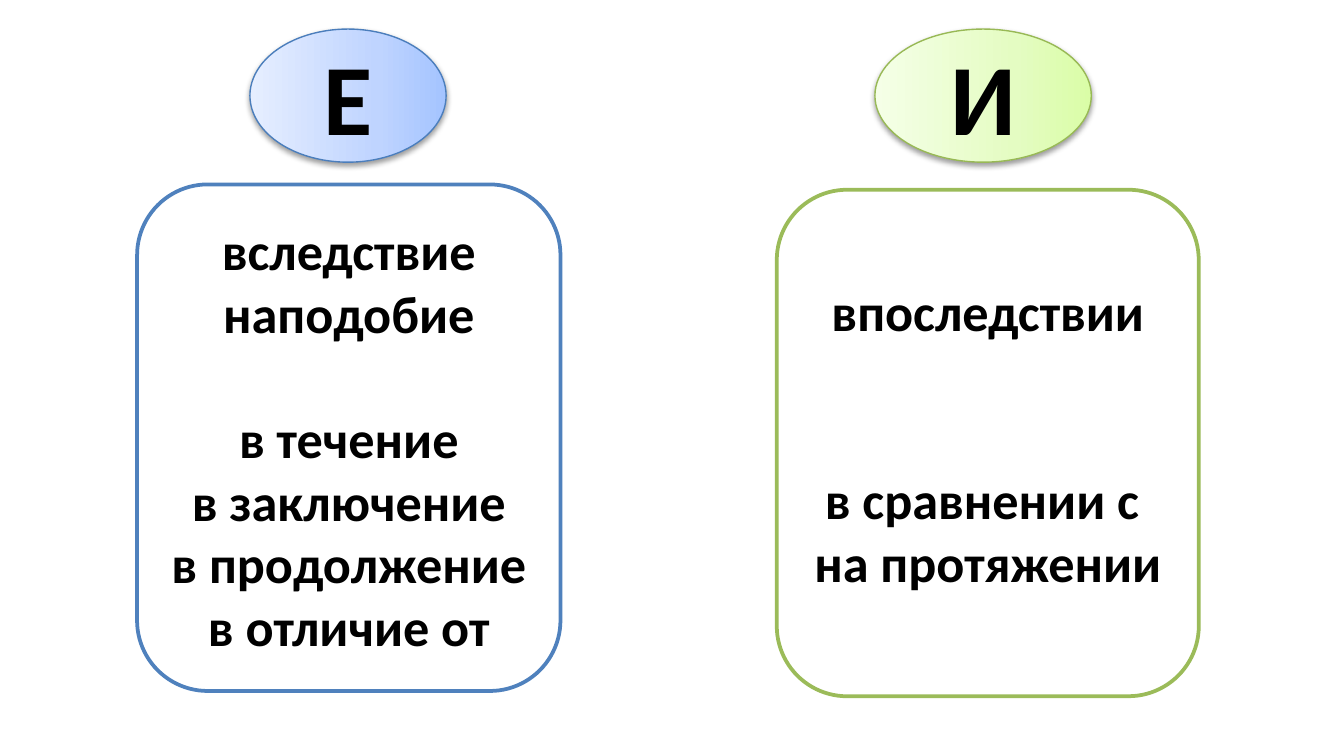
from copy import deepcopy
from dataclasses import dataclass

from lxml import etree
from pptx import Presentation
from pptx.dml.color import RGBColor
from pptx.enum.shapes import MSO_SHAPE
from pptx.enum.text import MSO_ANCHOR, PP_ALIGN
from pptx.util import Inches, Pt

OVAL, ROUNDED = MSO_SHAPE.OVAL, MSO_SHAPE.ROUNDED_RECTANGLE
TOP, MIDDLE, CENTER = MSO_ANCHOR.TOP, MSO_ANCHOR.MIDDLE, PP_ALIGN.CENTER
DRAWING = "http://schemas.openxmlformats.org/drawingml/2006/main"


@dataclass
class Theme:
    font: str = "Calibri"
    text: str = "000000"
    panel: str = "FFFFFF"
    letter_size: int = 54
    word_size: int = 28
    word_line: float = 33.5  # height of one line of words, in points
    blue: tuple = ("4B7EBC", "4F81BD", ("E6EEFF", "BFD4FF", "A4C4FF"))
    green: tuple = ("98B955", "9BBB59", ("F5FFE7", "E4FCC2", "DAFDA7"))


theme = Theme()
presentation = Presentation()
presentation.slide_width = Inches(10)
presentation.slide_height = presentation.slide_width * 9 // 16
slide = presentation.slides.add_slide(presentation.slide_layouts[6])

# Grid of 100 columns by 100 rows
COLUMN = presentation.slide_width / 100
ROW = presentation.slide_height / 100


def add_outlined(kind, box, line_color, line_width):
    left, top, width, height = box
    shape = slide.shapes.add_shape(kind, int(left * COLUMN), int(top * ROW),
                                   int(width * COLUMN), int(height * ROW))
    shape.shadow.inherit = False
    shape.line.color.rgb = RGBColor.from_string(line_color)
    shape.line.width = Pt(line_width)
    return shape


def write_lines(shape, lines, size, anchor):
    """Each line is its text and the space above it in points."""
    frame = shape.text_frame
    frame.word_wrap = True
    frame.vertical_anchor = anchor
    frame.text = "\n".join(text for text, _ in lines)
    for paragraph, (_, space) in zip(frame.paragraphs, lines):
        paragraph.alignment = CENTER
        paragraph.space_before = Pt(space)
        font = paragraph.runs[0].font
        font.name, font.size, font.bold = theme.font, Pt(size), True
        font.color.rgb = RGBColor.from_string(theme.text)


# Letter, colours, oval box, panel box, anchor, blank lines on top, words
groups = [
    ("Е", theme.blue, (18.6, 3.85, 14.6, 17.6), (10.2, 24.4, 31.5, 67), MIDDLE, 0,
     [("вследствие", 0), ("наподобие", 0), ("в течение", theme.word_line),
      ("в заключение", 0), ("в продолжение", 0), ("в отличие от", 0)]),
    ("И", theme.green, (65.1, 3.85, 16.1, 17.6), (57.8, 25.1, 31.4, 67), TOP, 1,
     [("впоследствии", 0), ("в сравнении с ", 2 * theme.word_line),
      ("на протяжении ", 0)]),
]

for letter, colors, oval_box, panel_box, anchor, blank_lines, words in groups:
    oval_line, panel_line, gradient = colors

    # Oval with the ending: three-stop gradient and soft shadow
    oval = add_outlined(OVAL, oval_box, oval_line, 0.75)
    oval.fill.gradient()
    oval.fill.gradient_angle = 0
    stop_list = oval._element.spPr.find(f".//{{{DRAWING}}}gsLst")
    stop_list.insert(1, deepcopy(stop_list[0]))
    for stop, position, color in zip(oval.fill.gradient_stops, (0, 0.65, 1), gradient):
        stop.position = position
        stop.color.rgb = RGBColor.from_string(color)
    effects = oval._element.spPr.find(f"{{{DRAWING}}}effectLst")
    shadow = etree.SubElement(effects, f"{{{DRAWING}}}outerShdw", blurRad=str(Pt(3.1)),
                              dist=str(Pt(1.6)), dir="5400000", rotWithShape="0")
    shadow_color = etree.SubElement(shadow, f"{{{DRAWING}}}srgbClr", val=theme.text)
    etree.SubElement(shadow_color, f"{{{DRAWING}}}alpha", val="38000")
    write_lines(oval, [(letter, 10)], theme.letter_size, MIDDLE)

    # Panel with the words
    panel = add_outlined(ROUNDED, panel_box, panel_line, 2)
    panel.fill.solid()
    panel.fill.fore_color.rgb = RGBColor.from_string(theme.panel)
    panel.text_frame.margin_top = Inches(0.05) + Pt(blank_lines * theme.word_line)
    write_lines(panel, words, theme.word_size, anchor)

presentation.save("out.pptx")
